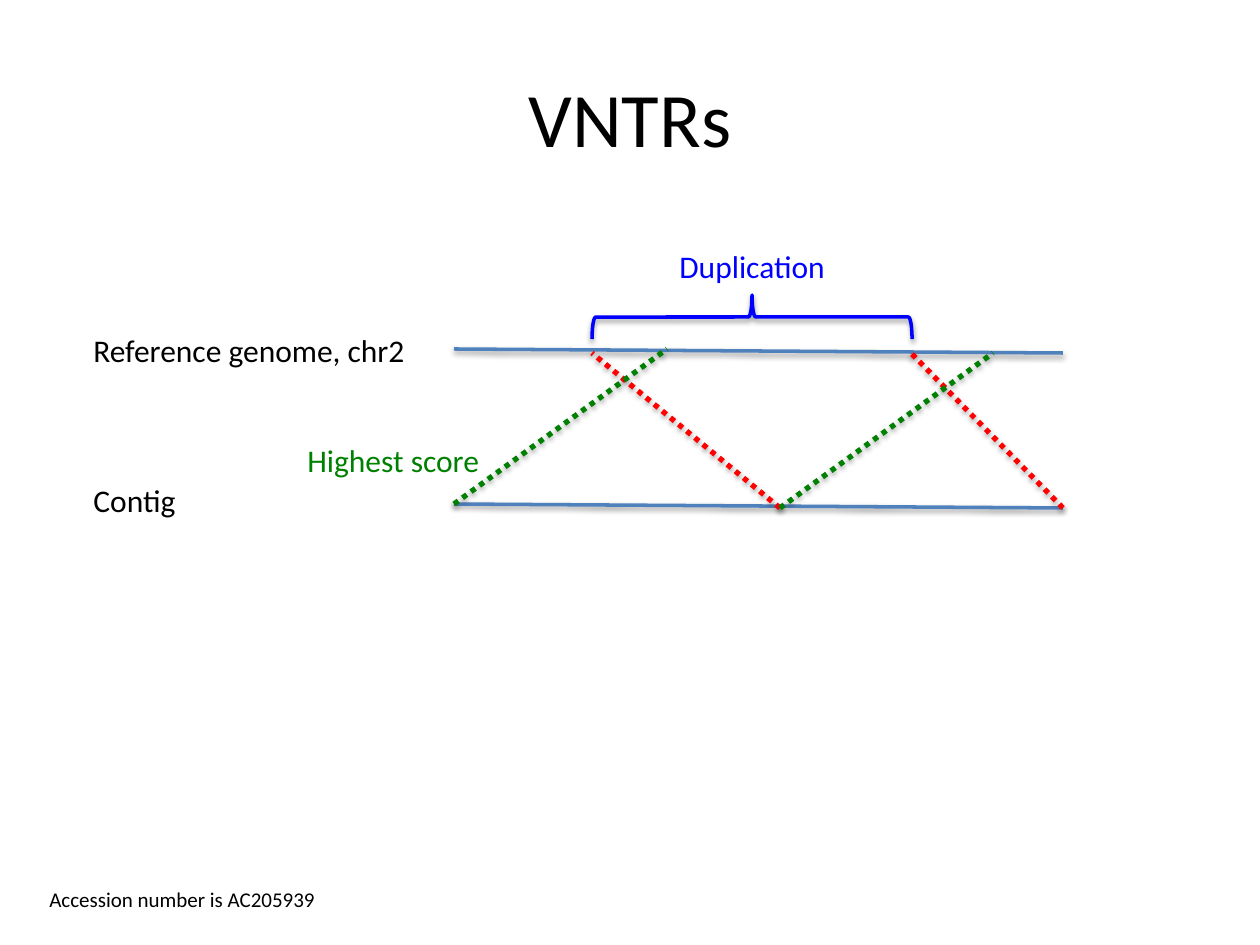
import lxml.etree
import pptx
import pptx.dml.color
import pptx.enum.dml
import pptx.enum.shapes
import pptx.enum.text
import pptx.oxml
import pptx.oxml.ns
import pptx.util

PX = 914400 / 126
COLORS = {"text": "000000", "sequence": "4F81BD", "best": "008000",
          "other": "FF0000", "duplication": "0000FF"}
SHADOW = (
    f'<a:effectLst {pptx.oxml.ns.nsdecls("a")}>'
    '<a:outerShdw blurRad="40000" dist="20000" dir="5400000" rotWithShape="0">'
    '<a:srgbClr val="000000"><a:alpha val="38000"/></a:srgbClr>'
    '</a:outerShdw></a:effectLst>')


def emu(*lengths):
    return [round(length * PX) for length in lengths]


def style_line(shape, color, width):
    shape.line.color.rgb = pptx.dml.color.RGBColor.from_string(COLORS[color])
    shape.line.width = pptx.util.Pt(width)
    shape._element.spPr.append(pptx.oxml.parse_xml(SHADOW))


presentation = pptx.Presentation()
presentation.slide_width, presentation.slide_height = emu(1260, 945)
slide = presentation.slides.add_slide(presentation.slide_layouts[5])

# Title
title = slide.shapes.title
title.left, title.top, title.width, title.height = emu(63, 38, 1134, 157)
title.text_frame.text = "VNTRs"
title.text_frame.vertical_anchor = pptx.enum.text.MSO_ANCHOR.MIDDLE
heading = title.text_frame.paragraphs[0]
heading.alignment = pptx.enum.text.PP_ALIGN.CENTER
heading.runs[0].font.size = pptx.util.Pt(44)
heading.runs[0].font.name = "Calibri"
heading.runs[0].font.color.rgb = pptx.dml.color.RGBColor.from_string(COLORS["text"])

# Reference genome and contig, then the dotted alignments between them
left, middle, right = 454, 780, 1063
for start_x, start_y, end_x, end_y, color in [
    (left, 349, right, 353, "sequence"),
    (left, 504, right, 508, "sequence"),
    (right, 508, 911, 353, "other"),
    (middle, 508, 592, 353, "other"),
    (middle, 508, 993, 353, "best"),
    (left, 504, 667, 349, "best"),
]:
    strand = slide.shapes.add_connector(
        pptx.enum.shapes.MSO_CONNECTOR.STRAIGHT,
        *emu(start_x, start_y, end_x, end_y))
    if color == "sequence":
        style_line(strand, color, 2)
    else:
        style_line(strand, color, 3)
        strand.line.dash_style = pptx.enum.dml.MSO_LINE.ROUND_DOT

# Brace over the duplicated stretch
brace = slide.shapes.add_shape(
    pptx.enum.shapes.MSO_SHAPE.LEFT_BRACE, *emu(730, 157, 44, 320))
brace.rotation = 90
brace.fill.background()
style_line(brace, "duplication", 2)

# Labels
for words, x, y, width, height, size, color in [
    ("Accession number is AC205939", 37, 880, 294, 38, 12, "text"),
    ("Reference genome, chr2", 81, 325, 340, 51, 18, "text"),
    ("Contig", 81, 475, 108, 51, 18, "text"),
    ("Highest score", 295, 435, 199, 51, 18, "best"),
    ("Duplication", 667, 241, 173, 51, 18, "duplication"),
]:
    label = slide.shapes.add_textbox(*emu(x, y, width, height)).text_frame
    label.word_wrap = False
    label.auto_size = pptx.enum.text.MSO_AUTO_SIZE.SHAPE_TO_FIT_TEXT
    label.text = words
    font = label.paragraphs[0].runs[0].font
    font.size = pptx.util.Pt(size)
    font.name = "Calibri"
    font.color.rgb = pptx.dml.color.RGBColor.from_string(COLORS[color])

presentation.save("out.pptx")
